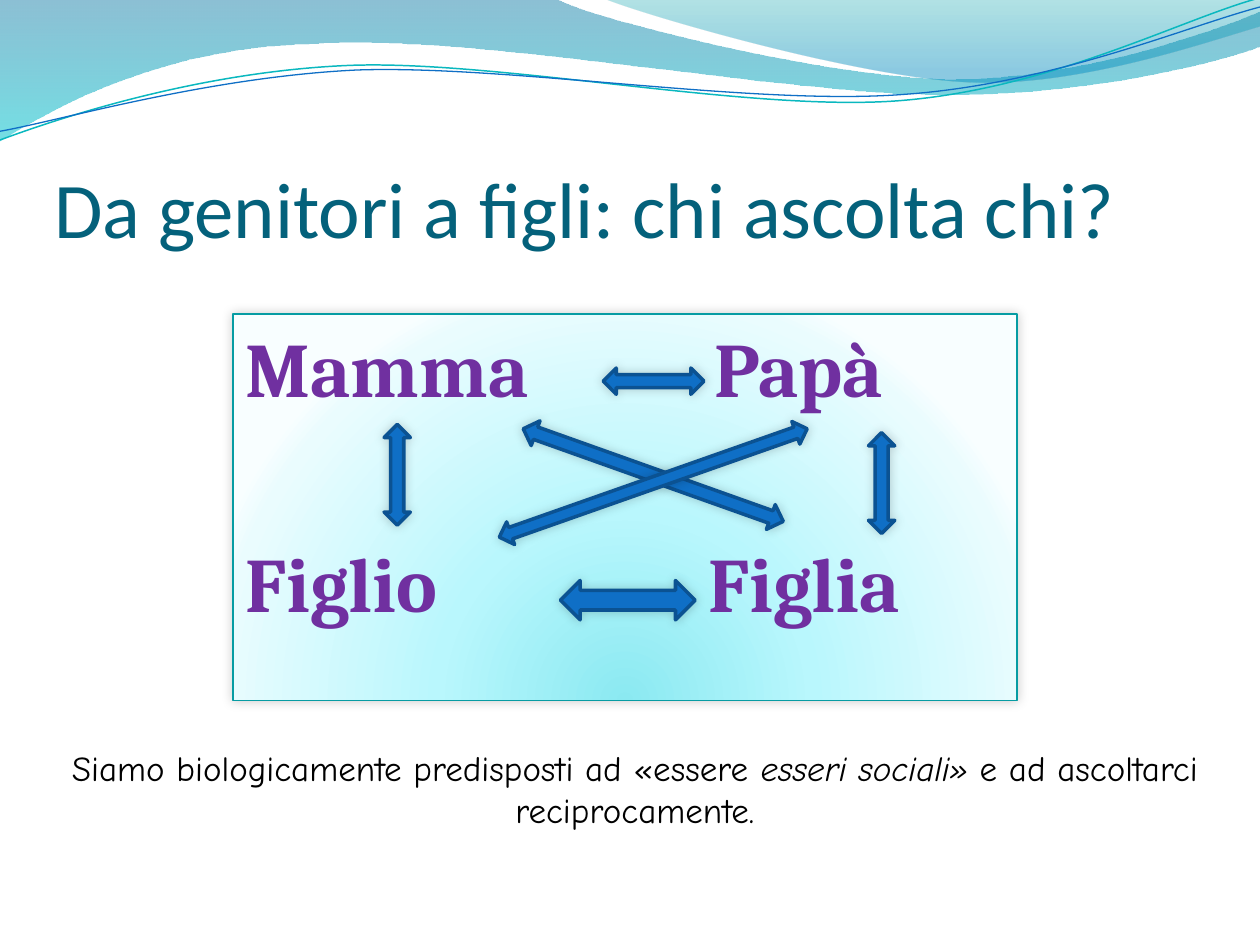
from dataclasses import dataclass
from math import cos, radians, sin
from lxml import etree
from pptx import Presentation
from pptx.dml.color import RGBColor
from pptx.enum.shapes import MSO_SHAPE
from pptx.enum.text import MSO_ANCHOR, PP_ALIGN
from pptx.oxml.ns import qn
from pptx.util import Pt

RECT, ARROW = MSO_SHAPE.RECTANGLE, MSO_SHAPE.LEFT_RIGHT_ARROW
TOP, BOTTOM = MSO_ANCHOR.TOP, MSO_ANCHOR.BOTTOM
LEFT, CENTER = PP_ALIGN.LEFT, PP_ALIGN.CENTER


@dataclass
class Theme:
    title: tuple = ("Calibri", 45, "04617B", False)
    family: tuple = ("Cambria", 44, "7030A0", True)
    note: tuple = ("Comic Neue", 20, "000000", False)
    arrow: str = "0F6FC6"
    edge: str = "0B5292"
    frame: str = "069CA3"
    teal: str = "0AB8BF"
    shade: str = "000000"
    glow: tuple = ((0, "8BE9F1", 100), (43, "B9F7FD", 100),
                   (93, "EAFCFE", 100), (100, "F8FEFF", 100))
    sea: tuple = ((0, "0074A1", 45), (100, "00C6CF", 55))
    sky: tuple = ((0, "00A1A9", 30), (80, "008BBF", 45))


theme = Theme()


def blend(shape, stops, radial=False):
    shape.fill.background()
    old = shape._element.spPr.find(qn("a:noFill"))
    grad = etree.Element(qn("a:gradFill"), rotWithShape="1")
    group = etree.SubElement(grad, qn("a:gsLst"))
    for pos, color, alpha in stops:
        stop = etree.SubElement(group, qn("a:gs"), pos=str(pos * 1000))
        tint = etree.SubElement(stop, qn("a:srgbClr"), val=color)
        if alpha < 100:
            etree.SubElement(tint, qn("a:alpha"), val=str(alpha * 1000))
    if radial:
        ring = etree.SubElement(grad, qn("a:path"), path="circle")
        etree.SubElement(ring, qn("a:fillToRect"), l="50000", t="130000", r="50000", b="-30000")
    else:
        etree.SubElement(grad, qn("a:lin"), ang="5400000", scaled="0")
    old.getparent().replace(old, grad)


def write(para, text, style, italic=False):
    run = para.add_run()
    run.text = text
    font = run.font
    font.name, size, color, font.bold = style
    font.size = Pt(size)
    font.color.rgb = RGBColor.from_string(color)
    font.italic = italic


deck = Presentation()
deck.slide_width, deck.slide_height = Pt(720), Pt(540)
slide = deck.slides.add_slide(deck.slide_layouts[6])
shapes = slide.shapes

bands = [
    ([(0, 0), (317, -1), (343, 12, 478, 45, 546, 45), (614, 45, 690, 19, 720, 6.5),
      (721, 26), (708, 32, 626, 55, 537, 54), (448, 54, 275, 20, 185, 24.5),
      (93, 26, 33, 60, -1, 81)], theme.sea, None, 0, (0, 0)),
    ([(345, -1), (366, 8, 491, 44.6, 554, 47), (616, 50, 692, 23, 720, 15),
      (720, 0)], theme.sky, None, 0, (0, 0)),
    ([(0, 80), (35, 67, 114, 41, 199, 37.4), (284, 34, 427, 64, 513, 57.6),
      (600, 51, 675, 11, 719, -1)], None, (theme.teal, 0.85), 2.7, (359.3, 41.4)),
    ([(0, 75), (34, 69, 119, 44, 204, 40), (290, 37, 430, 60.5, 516, 54),
      (602, 48, 678, 15, 720, 4)], None, (theme.arrow, 0.75), 2.7, (359.6, 42.5)),
]
for parts, stops, line, tilt, (midx, midy) in bands:
    c, s = cos(radians(tilt)), sin(radians(tilt))
    flat = [pair for part in parts for pair in zip(part[::2], part[1::2])]
    dots = [(Pt(midx + (x - midx) * c - (y - midy) * s),
             Pt(midy + (x - midx) * s + (y - midy) * c)) for x, y in flat]
    path = shapes.build_freeform(*dots[0])
    path.add_line_segments(dots[1:], close=bool(stops))
    wave = path.convert_to_shape()
    wave.rotation = -tilt
    wave.shadow.inherit = False
    legs = iter(list(wave._element.iter(qn("a:lnTo"))))
    for part in parts[1:]:
        leg = next(legs)
        if len(part) == 6:
            curve = etree.Element(qn("a:cubicBezTo"))
            leg.addprevious(curve)
            for piece in (leg, next(legs), next(legs)):
                curve.append(piece[0])
                piece.getparent().remove(piece)
    if stops:
        blend(wave, stops)
        wave.line.fill.background()
    else:
        wave.fill.background()
        wave.line.color.rgb = RGBColor.from_string(line[0])
        wave.line.width = Pt(line[1])

title = shapes.add_textbox(Pt(31), Pt(55.5), Pt(648), Pt(90)).text_frame
title.word_wrap = True
title.vertical_anchor = BOTTOM
title.margin_left = title.margin_right = title.margin_bottom = 0
write(title.paragraphs[0], "Da genitori a figli: chi ascolta chi?", theme.title)

panel = shapes.add_shape(RECT, Pt(133.2), Pt(179.5), Pt(448), Pt(221))
blend(panel, theme.glow, radial=True)
panel.line.color.rgb = RGBColor.from_string(theme.frame)
panel.line.width = Pt(0.75)
frame = panel.text_frame
frame.word_wrap = True
frame.vertical_anchor = TOP
rows = [("Mamma\tPapà", 268, 0), ("Figlio\tFiglia", 264.5, 70.5)]
for row, (text, stop, gap) in enumerate(rows):
    para = frame.add_paragraph() if row else frame.paragraphs[0]
    para.alignment = LEFT
    para.space_before = Pt(gap)
    tabs = etree.SubElement(para._p.get_or_add_pPr(), qn("a:tabLst"))
    etree.SubElement(tabs, qn("a:tab"), pos=str(Pt(stop)), algn="l")
    write(para, text, theme.family)

cast = [panel]
arrows = [
    (358.8, 343, 77, 22.5, 0),
    (227, 271.3, 57.6, 15, 270),
    (373.3, 271.5, 157.7, 15, 19.6),
    (373.3, 276, 186.5, 13.7, 340.6),
    (503.8, 276, 57.6, 15, 270),
    (373.5, 217.8, 57.6, 15, 0),
]
for mid, level, wide, high, turn in arrows:
    arrow = shapes.add_shape(ARROW, Pt(mid - wide / 2), Pt(level - high / 2), Pt(wide), Pt(high))
    arrow.rotation = turn
    arrow.fill.solid()
    arrow.fill.fore_color.rgb = RGBColor.from_string(theme.arrow)
    arrow.line.color.rgb = RGBColor.from_string(theme.edge)
    arrow.line.width = Pt(2)
    cast.append(arrow)

for shape in cast:
    shape.shadow.inherit = False
    effect = shape._element.spPr.find(qn("a:effectLst"))
    soft = etree.SubElement(effect, qn("a:outerShdw"), blurRad=str(Pt(6)), dist="0")
    tint = etree.SubElement(soft, qn("a:srgbClr"), val=theme.shade)
    etree.SubElement(tint, qn("a:alpha"), val="20000")

note = shapes.add_textbox(Pt(25.5), Pt(423), Pt(674.6), Pt(55.4)).text_frame
note.word_wrap = True
para = note.paragraphs[0]
para.alignment = CENTER
write(para, "Siamo biologicamente predisposti ad «essere ", theme.note)
write(para, "esseri sociali» ", theme.note, italic=True)
write(para, "e ad ascoltarci reciprocamente.", theme.note)

deck.save("out.pptx")
